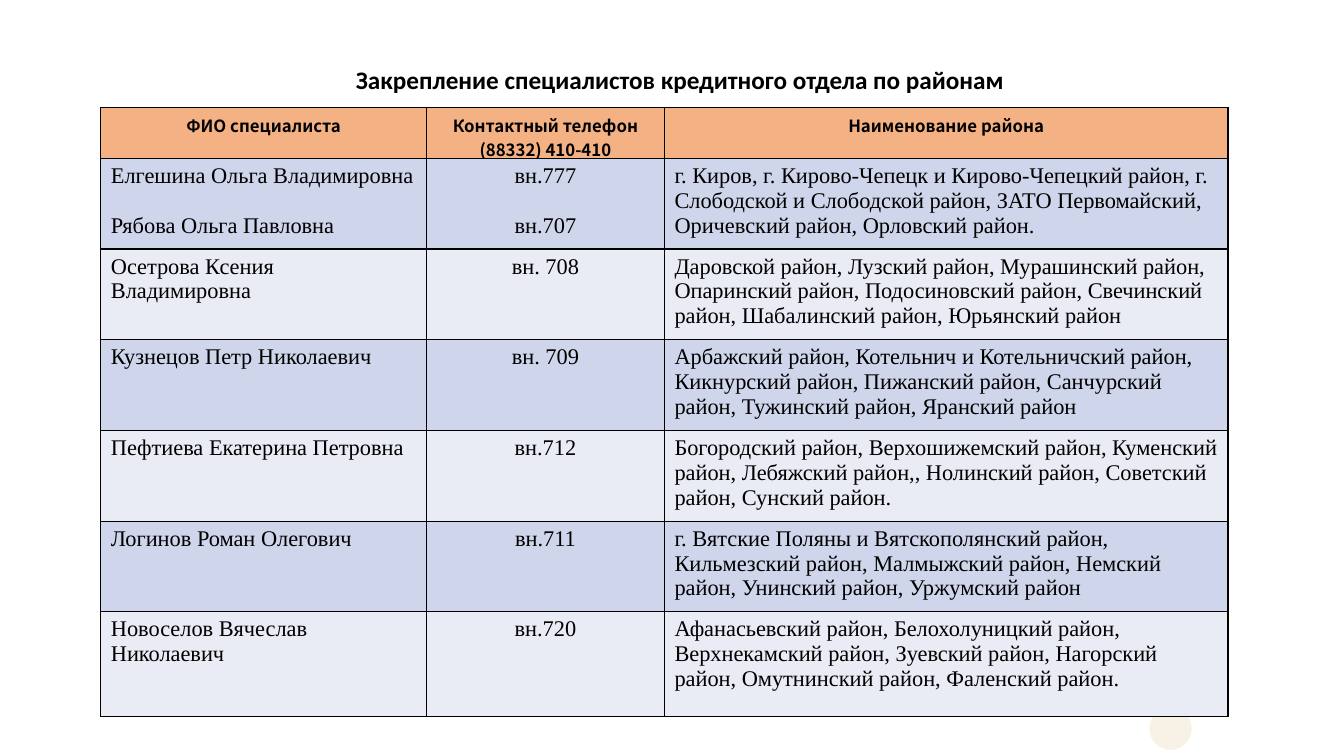
"""Build a slide with a table assigning credit department specialists to districts."""
import pptx
import pptx.dml.color
import pptx.enum.shapes
import pptx.enum.text
import pptx.util
from lxml import etree
from pptx.dml.color import RGBColor
from pptx.util import Inches

BLACK = RGBColor(0x00, 0x00, 0x00)
CREAM = RGBColor(0xF7, 0xF2, 0xE5)
ORANGE = RGBColor(0xF4, 0xB1, 0x83)
BANDS = [RGBColor(0xCF, 0xD5, 0xEA), RGBColor(0xE9, 0xEB, 0xF5)]
DRAWING_NS = "http://schemas.openxmlformats.org/drawingml/2006/main"

HEADER = ["ФИО специалиста", "Контактный телефон\n(88332) 410-410", "Наименование района"]
SPECIALISTS = [
    ["Елгешина Ольга Владимировна\nРябова Ольга Павловна", "вн.777\nвн.707",
     "г. Киров, г. Кирово-Чепецк и Кирово-Чепецкий район, г. Слободской и Слободской район, "
     "ЗАТО Первомайский, Оричевский район, Орловский район."],
    ["Осетрова Ксения Владимировна", "вн. 708",
     "Даровской район, Лузский район, Мурашинский район, Опаринский район, "
     "Подосиновский район, Свечинский район, Шабалинский район, Юрьянский район"],
    ["Кузнецов Петр Николаевич", "вн. 709",
     "Арбажский район, Котельнич и Котельничский район, Кикнурский район, "
     "Пижанский район, Санчурский район, Тужинский район, Яранский район"],
    ["Пефтиева Екатерина Петровна", "вн.712",
     "Богородский район, Верхошижемский район, Куменский район, Лебяжский район,, "
     "Нолинский район, Советский район, Сунский район."],
    ["Логинов Роман Олегович", "вн.711",
     "г. Вятские Поляны и Вятскополянский район, Кильмезский район, "
     "Малмыжский район, Немский район, Унинский район, Уржумский район"],
    ["Новоселов Вячеслав Николаевич", "вн.720",
     "Афанасьевский район, Белохолуницкий район, Верхнекамский район, Зуевский район, "
     "Нагорский район, Омутнинский район, Фаленский район."],
]
COLUMN_WIDTHS = [3.23, 2.36, 5.59]
ROW_HEIGHTS = [0.47] + [0.87] * 5 + [1.04]


def format_paragraph(p, font_name, size, bold, centered):
    p.alignment = pptx.enum.text.PP_ALIGN.CENTER if centered else pptx.enum.text.PP_ALIGN.LEFT
    for r in p.runs:
        r.font.name = font_name
        r.font.size = pptx.util.Pt(size)
        r.font.bold = bold
        r.font.color.rgb = BLACK


def add_borders(cell):
    tc_pr = cell._tc.get_or_add_tcPr()
    for i, side in enumerate(["lnL", "lnR", "lnT", "lnB"]):
        line = etree.Element(f"{{{DRAWING_NS}}}{side}", w=str(pptx.util.Pt(1)))
        fill = etree.SubElement(line, f"{{{DRAWING_NS}}}solidFill")
        etree.SubElement(fill, f"{{{DRAWING_NS}}}srgbClr", val=str(BLACK))
        tc_pr.insert(i, line)


prs = pptx.Presentation()
prs.slide_width = Inches(13.33)
prs.slide_height = Inches(7.5)
s = prs.slides.add_slide(prs.slide_layouts[6])

sp = s.shapes.add_shape(pptx.enum.shapes.MSO_SHAPE.OVAL,
                        Inches(11.4), Inches(7.02), Inches(0.42), Inches(0.42))
sp.shadow.inherit = False
sp.fill.solid()
sp.fill.fore_color.rgb = CREAM
sp.line.fill.background()

title = s.shapes.add_textbox(Inches(1.31), Inches(0.6), Inches(10.87), Inches(0.39))
tf = title.text_frame
tf.word_wrap = True
tf.vertical_anchor = pptx.enum.text.MSO_ANCHOR.BOTTOM
tf.margin_left = tf.margin_right = tf.margin_top = tf.margin_bottom = Inches(0.05)
tf.text = "Закрепление специалистов кредитного отдела по районам"
tf.paragraphs[0].line_spacing = 0.9
format_paragraph(tf.paragraphs[0], "Calibri", 18, True, True)

rows = [HEADER] + SPECIALISTS
table = s.shapes.add_table(len(rows), len(HEADER), Inches(1), Inches(1.07),
                           Inches(sum(COLUMN_WIDTHS)), Inches(sum(ROW_HEIGHTS))).table
table.first_row = False
table.horz_banding = False
for column, width in zip(table.columns, COLUMN_WIDTHS):
    column.width = Inches(width)

for i, texts in enumerate(rows):
    table.rows[i].height = Inches(ROW_HEIGHTS[i])
    is_header = i == 0
    for j, text in enumerate(texts):
        cell = table.cell(i, j)
        cell.fill.solid()
        cell.fill.fore_color.rgb = ORANGE if is_header else BANDS[(i - 1) % 2]
        add_borders(cell)
        cell.text_frame.text = text
        for k, p in enumerate(cell.text_frame.paragraphs):
            if is_header:
                format_paragraph(p, "Noto Sans CJK JP", 12, True, True)
            else:
                format_paragraph(p, "Times New Roman", 16, False, j == 1)
                if k > 0:
                    p.space_before = pptx.util.Pt(18)

prs.save("out.pptx")
